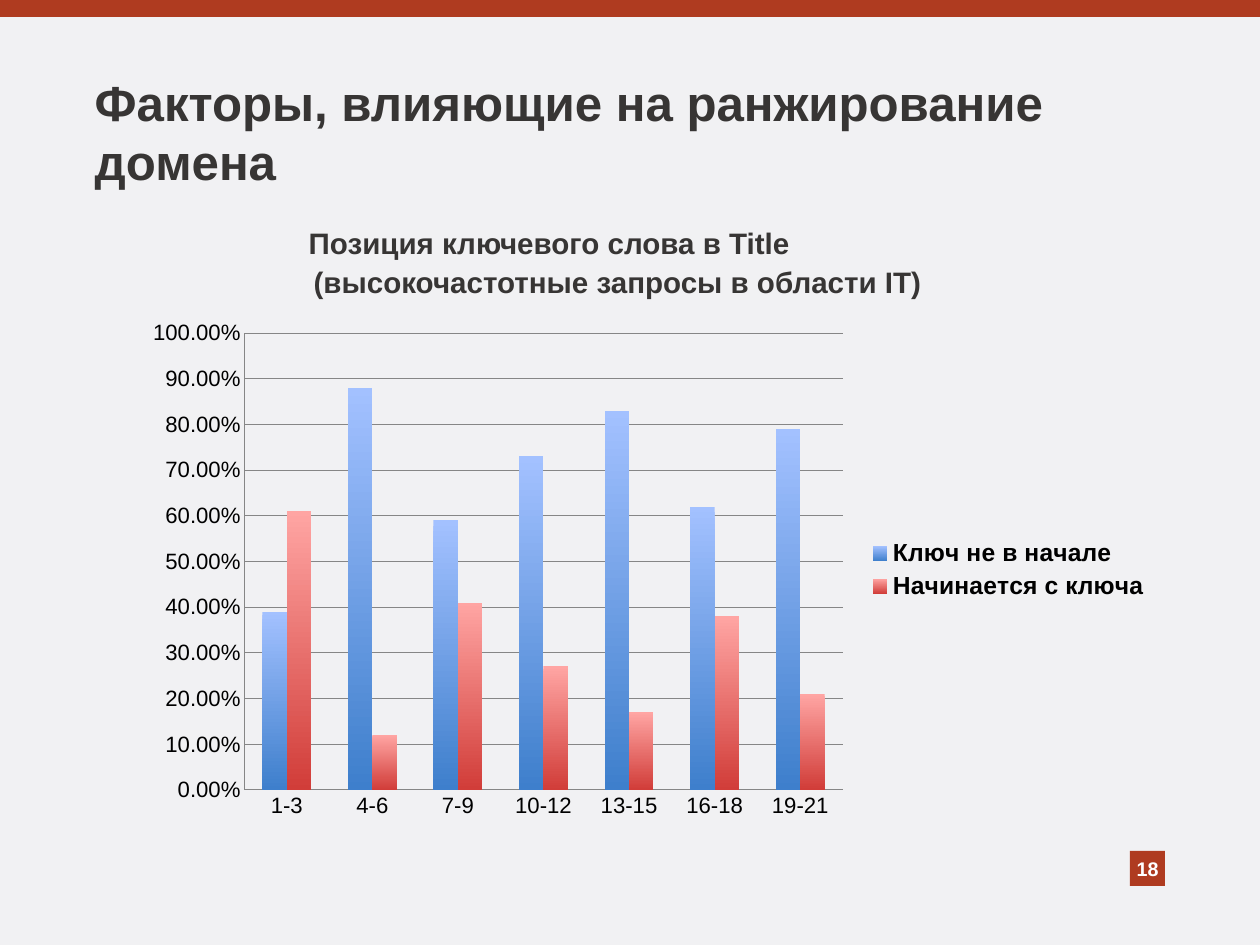
from lxml import etree
from pptx import Presentation
from pptx.chart.data import CategoryChartData
from pptx.dml.color import RGBColor
from pptx.enum.chart import XL_CHART_TYPE, XL_LEGEND_POSITION, XL_TICK_MARK
from pptx.enum.shapes import MSO_SHAPE
from pptx.enum.text import MSO_ANCHOR, PP_ALIGN
from pptx.oxml.ns import qn
from pptx.util import Pt

COLUMNS = XL_CHART_TYPE.COLUMN_CLUSTERED
RIGHT = XL_LEGEND_POSITION.RIGHT
NO_TICK = XL_TICK_MARK.NONE
RECTANGLE = MSO_SHAPE.RECTANGLE
TOP, MIDDLE = MSO_ANCHOR.TOP, MSO_ANCHOR.MIDDLE
LEFT, CENTER = PP_ALIGN.LEFT, PP_ALIGN.CENTER

TITLE = "Факторы, влияющие на ранжирование домена"
SUBTITLE = "Позиция ключевого слова в Title\v(высокочастотные запросы в области IT)"
PAGE_NUMBER = "18"
POSITIONS = ["1-3", "4-6", "7-9", "10-12", "13-15", "16-18", "19-21"]
SERIES = {
    "Ключ не в начале": [0.39, 0.88, 0.59, 0.73, 0.83, 0.62, 0.79],
    "Начинается с ключа": [0.61, 0.12, 0.41, 0.27, 0.17, 0.38, 0.21],
}

THEME = {
    "font": "Arial",
    "background": "F1F1F3",
    "accent": "AF3B20",
    "ink": "373534",
    "on_accent": "FFFFFF",
    "chart_text": "000000",
    "grid": "868686",
    "gradients": [("A3C1FF", "3E7FCC"), ("FFA5A3", "D13D39")],
    "title_size": 40,
    "subtitle_size": 24,
    "legend_size": 20,
    "axis_size": 18,
    "number_size": 16,
}

# Left, top, width, height in px
SLIDE = (1260, 945)
BAND_BOX = (0, 0, 1260, 17)
TITLE_BOX = (86, 98, 1063, 67)
SUBTITLE_BOX = (300, 217, 780, 90)
BADGE_BOX = (1130, 851, 35, 35)
CHART_BOX = (133, 311, 1026, 518)
PLOT_BOX = (244, 333, 599, 457)
HANGING = 5
EMU_PER_PX = 10320


def px(length):
    return length * EMU_PER_PX


def rgb(name):
    return RGBColor.from_string(THEME.get(name, name))


def place(box):
    return [px(length) for length in box]


def set_font(font, size, color, bold=False):
    values = {"name": THEME["font"], "size": Pt(THEME[size]), "bold": bold}
    for name, value in values.items():
        setattr(font, name, value)
    font.color.rgb = rgb(color)


def write(frame, text, size, color, anchor=TOP, align=LEFT):
    frame.word_wrap = True
    frame.vertical_anchor = anchor
    para = frame.paragraphs[0]
    para.text = text
    para.alignment = align
    for span in para.runs:
        set_font(span.font, size, color, bold=True)
    return para


def add_accent(page, box):
    shape = page.shapes.add_shape(RECTANGLE, *place(box))
    shape.shadow.inherit = False
    shape.fill.solid()
    shape.fill.fore_color.rgb = rgb("accent")
    shape.line.fill.background()
    return shape


def fix_plot_area(chart):
    """Pin the inner plot area to PLOT_BOX, as fractions of the chart."""
    left, top, width, height = CHART_BOX
    plot_left, plot_top, plot_width, plot_height = PLOT_BOX
    settings = {
        "layoutTarget": "inner", "xMode": "edge", "yMode": "edge",
        "x": (plot_left - left) / width, "y": (plot_top - top) / height,
        "w": plot_width / width, "h": plot_height / height,
    }
    area = chart.element.find(".//" + qn("c:plotArea"))
    for old in area.findall(qn("c:layout")):
        area.remove(old)
    layout = etree.Element(qn("c:layout"))
    manual = etree.SubElement(layout, qn("c:manualLayout"))
    for name, value in settings.items():
        etree.SubElement(manual, qn("c:" + name)).set("val", str(value))
    area.insert(0, layout)


def add_position_chart(page):
    data = CategoryChartData(number_format="0.00%")
    data.categories = POSITIONS
    for name, values in SERIES.items():
        data.add_series(name, values)
    chart = page.shapes.add_chart(COLUMNS, *place(CHART_BOX), data).chart
    chart.has_title = False
    set_font(chart.font, "axis_size", "chart_text")

    chart.has_legend = True
    chart.legend.position = RIGHT
    chart.legend.include_in_layout = False
    set_font(chart.legend.font, "legend_size", "chart_text", bold=True)

    shares = chart.value_axis
    scale = {"minimum_scale": 0, "maximum_scale": 1, "major_unit": 0.1,
             "has_major_gridlines": True}
    for name, value in scale.items():
        setattr(shares, name, value)
    shares.tick_labels.number_format = "0.00%"
    shares.tick_labels.number_format_is_linked = False
    for axis in (chart.category_axis, shares):
        axis.major_tick_mark = axis.minor_tick_mark = NO_TICK
    for owner in (chart.category_axis, shares, shares.major_gridlines):
        owner.format.line.color.rgb = rgb("grid")
        owner.format.line.width = Pt(0.75)

    plot = chart.plots[0]
    plot.vary_by_categories = False
    plot.gap_width = 150
    plot.overlap = 0
    for series, colors in zip(plot.series, THEME["gradients"]):
        series.invert_if_negative = False
        fill = series.format.fill
        fill.gradient()
        fill.gradient_angle = 270
        for stop, color in zip(fill.gradient_stops, colors):
            stop.color.rgb = rgb(color)
    fix_plot_area(chart)


def main():
    deck = Presentation()
    deck.slide_width, deck.slide_height = place(SLIDE)
    page = deck.slides.add_slide(deck.slide_layouts[6])
    page.background.fill.solid()
    page.background.fill.fore_color.rgb = rgb("background")

    add_accent(page, BAND_BOX)
    badge = add_accent(page, BADGE_BOX).text_frame
    badge.margin_left = badge.margin_right = 0
    write(badge, PAGE_NUMBER, "number_size", "on_accent", MIDDLE, CENTER)

    title = page.shapes.add_textbox(*place(TITLE_BOX)).text_frame
    write(title, TITLE, "title_size", "ink", MIDDLE)

    subtitle = page.shapes.add_textbox(*place(SUBTITLE_BOX)).text_frame
    para = write(subtitle, SUBTITLE, "subtitle_size", "ink")
    para.line_spacing = 1.1
    properties = para._p.get_or_add_pPr()
    properties.set("marL", str(px(HANGING)))
    properties.set("indent", str(px(-HANGING)))

    add_position_chart(page)
    deck.save("out.pptx")


if __name__ == "__main__":
    main()
